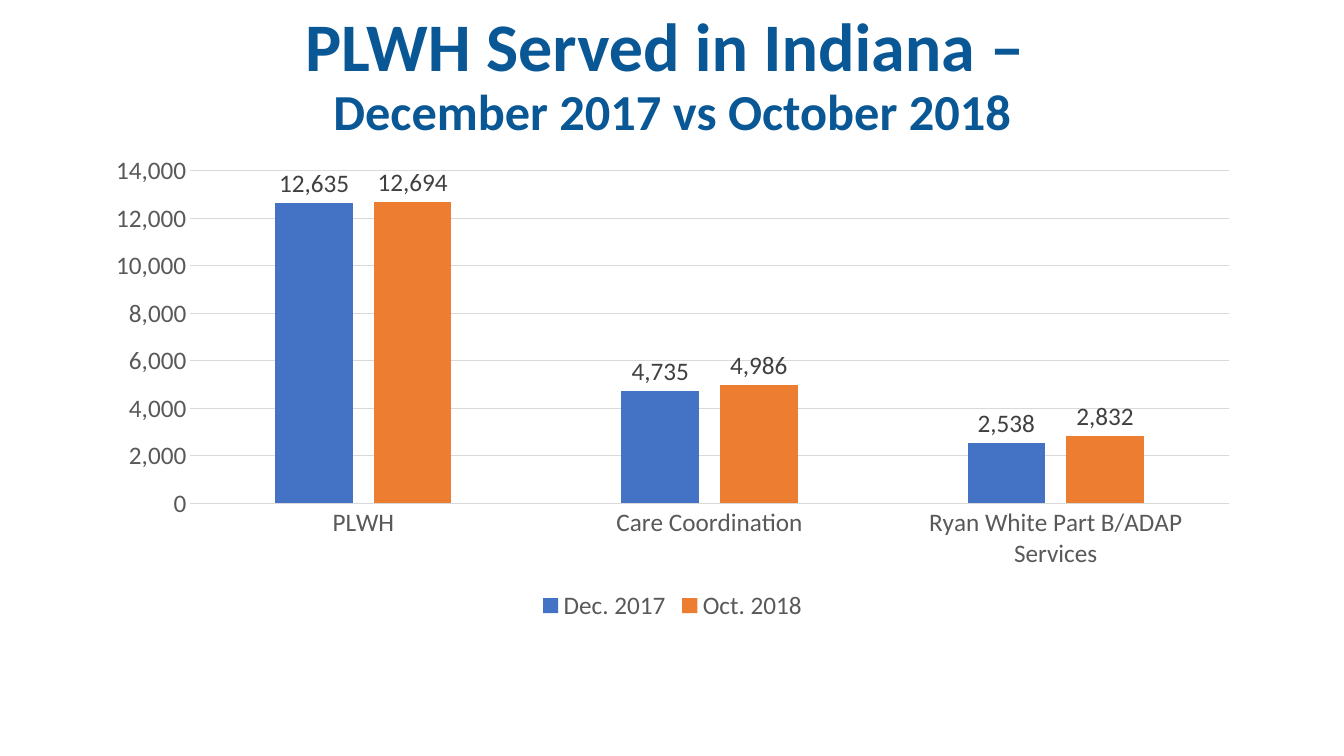
import pptx
import pptx.util
import pptx.dml.color
import pptx.chart.data
import pptx.enum.chart
import pptx.enum.text

HEAD = [("PLWH Served in Indiana – ", 48.6), ("December 2017 vs October 2018", 36)]
GROUPS = ["PLWH", "Care Coordination", "Ryan White Part B/ADAP Services"]
SERIES = [
    ("Dec. 2017", (12635, 4735, 2538), "4472C4"),
    ("Oct. 2018", (12694, 4986, 2832), "ED7D31"),
]
SIZE = (1344, 756)
LEFT, WIDTH = 93, 1159
TITLE = (LEFT, 31, WIDTH, 92)
CHART = (LEFT, 146, WIDTH, 480)
SCALE = 914400 / 100.8
GRID = "D9D9D9"
GRAY = "595959"
DARK = "404040"
BLUE = "095895"
FORMAT = "#,##0"
KINDS = pptx.enum.chart


def px(n):
    return pptx.util.Emu(round(n * SCALE))


def color(text):
    return pptx.dml.color.RGBColor.from_string(text)


def put(item, **values):
    for name, value in values.items():
        setattr(item, name, value)


def style(font, size, tint, bold=False):
    put(font, name="Calibri", size=pptx.util.Pt(size), bold=bold)
    font.color.rgb = color(tint)


def rule(line):
    line.color.rgb = color(GRID)
    line.width = pptx.util.Pt(0.75)


def title(slide):
    shape = slide.shapes.title
    put(shape, **dict(zip(("left", "top", "width", "height"), map(px, TITLE))))
    frame = shape.text_frame
    put(frame, word_wrap=True, auto_size=pptx.enum.text.MSO_AUTO_SIZE.NONE,
        vertical_anchor=pptx.enum.text.MSO_ANCHOR.MIDDLE)
    para = frame.paragraphs[0]
    put(para, alignment=pptx.enum.text.PP_ALIGN.CENTER, line_spacing=0.9)
    for i, (text, size) in enumerate(HEAD):
        if i:
            para.add_line_break()
        run = para.add_run()
        run.text = text
        style(run.font, size, BLUE, True)


def graph(slide):
    data = pptx.chart.data.CategoryChartData(number_format=FORMAT)
    data.categories = GROUPS
    for name, values, tint in SERIES:
        data.add_series(name, values)
    chart = slide.shapes.add_chart(
        KINDS.XL_CHART_TYPE.COLUMN_CLUSTERED, *map(px, CHART), data).chart
    style(chart.font, 18, "000000")
    put(chart, has_title=False, has_legend=True)
    put(chart.legend, position=KINDS.XL_LEGEND_POSITION.BOTTOM,
        include_in_layout=False)
    style(chart.legend.font, 18, GRAY)

    base, scale = chart.category_axis, chart.value_axis
    for axis in (base, scale):
        put(axis, major_tick_mark=KINDS.XL_TICK_MARK.NONE,
            minor_tick_mark=KINDS.XL_TICK_MARK.NONE)
        style(axis.tick_labels.font, 18, GRAY)
    rule(base.format.line)
    scale.format.line.fill.background()
    scale.has_major_gridlines = True
    rule(scale.major_gridlines.format.line)
    put(scale.tick_labels, number_format=FORMAT, number_format_is_linked=False)

    plot = chart.plots[0]
    put(plot, gap_width=219, overlap=-27, vary_by_categories=False)
    for bars, (name, values, tint) in zip(plot.series, SERIES):
        bars.format.fill.solid()
        bars.format.fill.fore_color.rgb = color(tint)
        bars.invert_if_negative = False
        labels = bars.data_labels
        put(labels, show_value=True, number_format=FORMAT,
            number_format_is_linked=False,
            position=KINDS.XL_LABEL_POSITION.OUTSIDE_END)
        style(labels.font, 18, DARK)


def main():
    deck = pptx.Presentation()
    put(deck, **dict(zip(("slide_width", "slide_height"), map(px, SIZE))))
    slide = deck.slides.add_slide(deck.slide_layouts[5])
    title(slide)
    graph(slide)
    deck.save("out.pptx")


if __name__ == "__main__":
    main()
